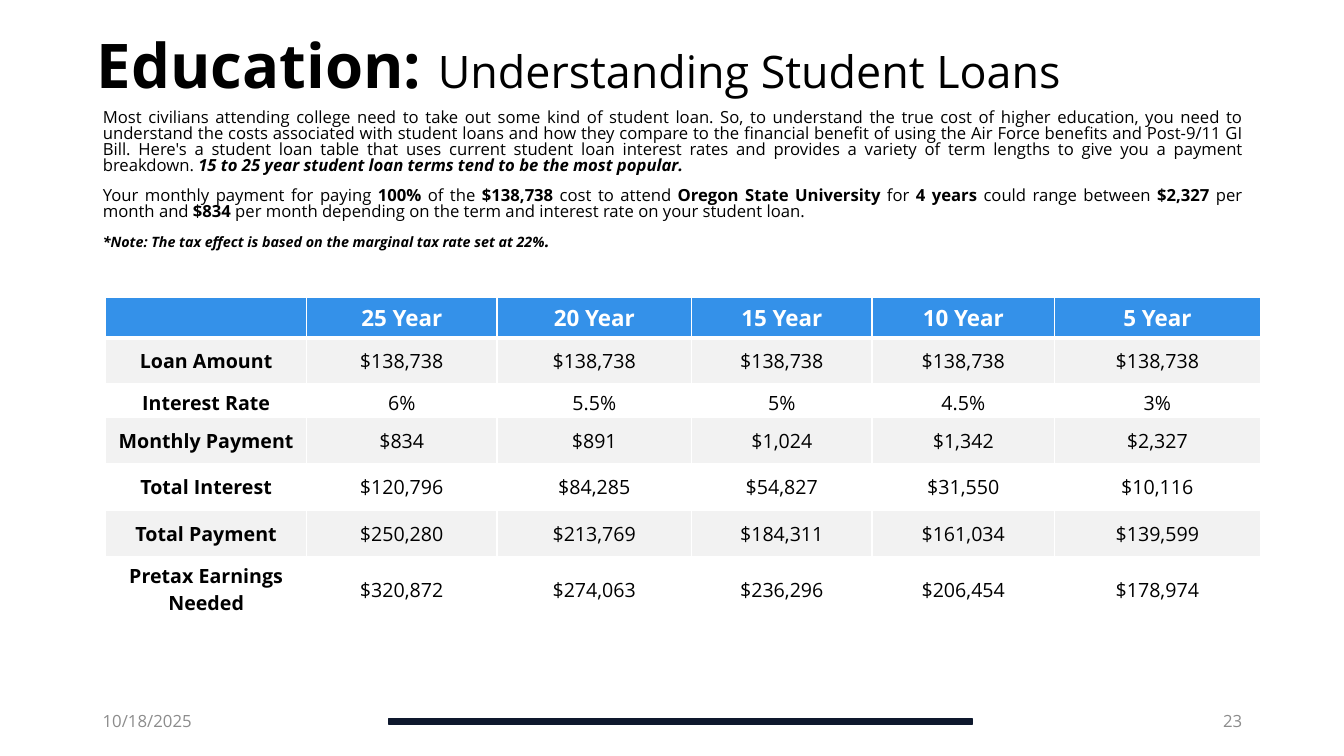
"""Build the slide on understanding student loans."""
from dataclasses import dataclass

from lxml.etree import SubElement
from pptx import Presentation
from pptx.dml.color import RGBColor
from pptx.enum.shapes import MSO_SHAPE
from pptx.enum.text import MSO_ANCHOR as Anchor, MSO_AUTO_SIZE as AutoSize, PP_ALIGN as Align
from pptx.oxml.ns import qn
from pptx.util import Inches, Pt


@dataclass(frozen=True)
class Theme:
    font: str = "Open Sans"
    black: str = "000000"
    white: str = "FFFFFF"
    gray: str = "8C8C8C"
    navy: str = "0E182D"
    blue: str = "3491E9"
    band: str = "F2F2F2"
    title: float = 44
    subtitle: float = 32
    body: float = 11.9
    note: float = 10.2
    header: float = 16
    cell: float = 14
    footer: float = 12


theme = Theme()


def write(paragraph, text, size=theme.body, color=theme.black, bold=False, italic=False):
    run = paragraph.add_run()
    run.text = text
    run.font.name = theme.font
    run.font.size = Pt(size)
    run.font.bold = bold
    run.font.italic = italic
    run.font.color.rgb = RGBColor.from_string(color)


def add_border(cell, side, width):
    line = SubElement(cell._tc.get_or_add_tcPr(), qn(f"a:ln{side}"), w=str(Pt(width)))
    fill = SubElement(line, qn("a:solidFill"))
    SubElement(fill, qn("a:srgbClr"), val=theme.white)


presentation = Presentation()
presentation.slide_width = Inches(13.33)
presentation.slide_height = Inches(7.5)
slide = presentation.slides.add_slide(presentation.slide_layouts[1])

bar = slide.shapes.add_shape(
    MSO_SHAPE.RECTANGLE, Inches(3.86), Inches(7.13), Inches(5.78), Inches(0.06))
bar.shadow.inherit = False
bar.fill.solid()
bar.fill.fore_color.rgb = RGBColor.from_string(theme.navy)
bar.line.color.rgb = RGBColor.from_string(theme.navy)
bar.line.width = Pt(1)

title = slide.shapes.title
title.left, title.top, title.width, title.height = map(Inches, (0.86, 0.04, 11.55, 1.27))
title.text_frame.auto_size = AutoSize.NONE
title.text_frame.vertical_anchor = Anchor.MIDDLE
heading = title.text_frame.paragraphs[0]
heading.alignment = Align.LEFT
heading.line_spacing = 0.9
write(heading, "Education: ", size=theme.title, bold=True)
write(heading, "Understanding Student Loans", size=theme.subtitle)

strong = {"bold": True}
emphasis = {"bold": True, "italic": True}
body_paragraphs = [
    [("Most civilians attending college need to take out some kind of student loan. So, to "
      "understand the true cost of higher education, you need to understand the costs "
      "associated with student loans and how they compare to the financial benefit of using "
      "the Air Force benefits and Post-9/11 GI Bill. Here's a student loan table that uses "
      "current student loan interest rates and provides a variety of term lengths to give "
      "you a payment breakdown. ", {}),
     ("15 to 25 year student loan terms tend to be the most popular.", emphasis)],
    [("Your monthly payment for paying ", {}), ("100%", strong), (" of the ", {}),
     ("$138,738", strong), (" cost to attend ", {}), ("Oregon State University", strong),
     (" for ", {}), ("4 years", strong), (" could range between ", {}), ("$2,327", strong),
     (" per month and ", {}), ("$834", strong),
     (" per month depending on the term and interest rate on your student loan.", {})],
    [("*Note: The tax effect is based on the marginal tax rate set at 22%",
      {"size": theme.note, **emphasis}),
     (".", emphasis)],
]
body = slide.placeholders[1]
body.left, body.top, body.width, body.height = map(Inches, (0.92, 1.05, 11.5, 1.82))
body.text_frame.auto_size = AutoSize.NONE
for index, runs in enumerate(body_paragraphs):
    paragraph = body.text_frame.add_paragraph() if index else body.text_frame.paragraphs[0]
    properties = paragraph._p.get_or_add_pPr()
    properties.set("marL", "0")
    properties.set("indent", "0")
    SubElement(properties, qn("a:buNone"))
    paragraph.alignment = Align.JUSTIFY
    paragraph.line_spacing = 0.8
    paragraph.space_before = Pt(10 if index else 0)
    for text, style in runs:
        write(paragraph, text, **style)

for text, left, alignment in (("10/18/2025", 0.92, Align.LEFT), ("23", 9.42, Align.RIGHT)):
    footer = slide.shapes.add_textbox(Inches(left), Inches(6.95), Inches(3), Inches(0.4))
    footer.text_frame.word_wrap = True
    footer.text_frame.vertical_anchor = Anchor.MIDDLE
    paragraph = footer.text_frame.paragraphs[0]
    paragraph.alignment = alignment
    write(paragraph, text, size=theme.footer, color=theme.gray)

loan_rows = [
    ("", "25 Year", "20 Year", "15 Year", "10 Year", "5 Year"),
    ("Loan Amount",) + ("$138,738",) * 5,
    ("Interest Rate", "6%", "5.5%", "5%", "4.5%", "3%"),
    ("Monthly Payment", "$834", "$891", "$1,024", "$1,342", "$2,327"),
    ("Total Interest", "$120,796", "$84,285", "$54,827", "$31,550", "$10,116"),
    ("Total Payment", "$250,280", "$213,769", "$184,311", "$161,034", "$139,599"),
    ("Pretax Earnings Needed", "$320,872", "$274,063", "$236,296", "$206,454", "$178,974"),
]
column_widths = (1.99, 1.89, 1.93, 1.79, 1.81, 2.04)
row_heights = (0.29, 0.46, 0.27, 0.46, 0.46, 0.46, 0.65)
table = slide.shapes.add_table(
    len(loan_rows), len(column_widths),
    Inches(1.05), Inches(2.95), Inches(11.45), Inches(3.2)).table
for column, width in zip(table.columns, column_widths):
    column.width = Inches(width)
for row, height in zip(table.rows, row_heights):
    row.height = Inches(height)

for row_index, values in enumerate(loan_rows):
    is_header = row_index == 0
    row_fill = theme.blue if is_header else theme.band if row_index % 2 else theme.white
    for column_index, value in enumerate(values):
        cell = table.cell(row_index, column_index)
        add_border(cell, "L", 1)
        add_border(cell, "R", 1)
        add_border(cell, "T", 3 if row_index == 1 else 1)
        add_border(cell, "B", 3 if is_header else 1)
        cell.fill.solid()
        cell.fill.fore_color.rgb = RGBColor.from_string(row_fill)
        cell.vertical_anchor = Anchor.MIDDLE
        paragraph = cell.text_frame.paragraphs[0]
        paragraph.alignment = Align.CENTER
        if value:
            write(paragraph, value,
                  size=theme.header if is_header else theme.cell,
                  color=theme.white if is_header else theme.black,
                  bold=is_header or column_index == 0)

presentation.save("out.pptx")
